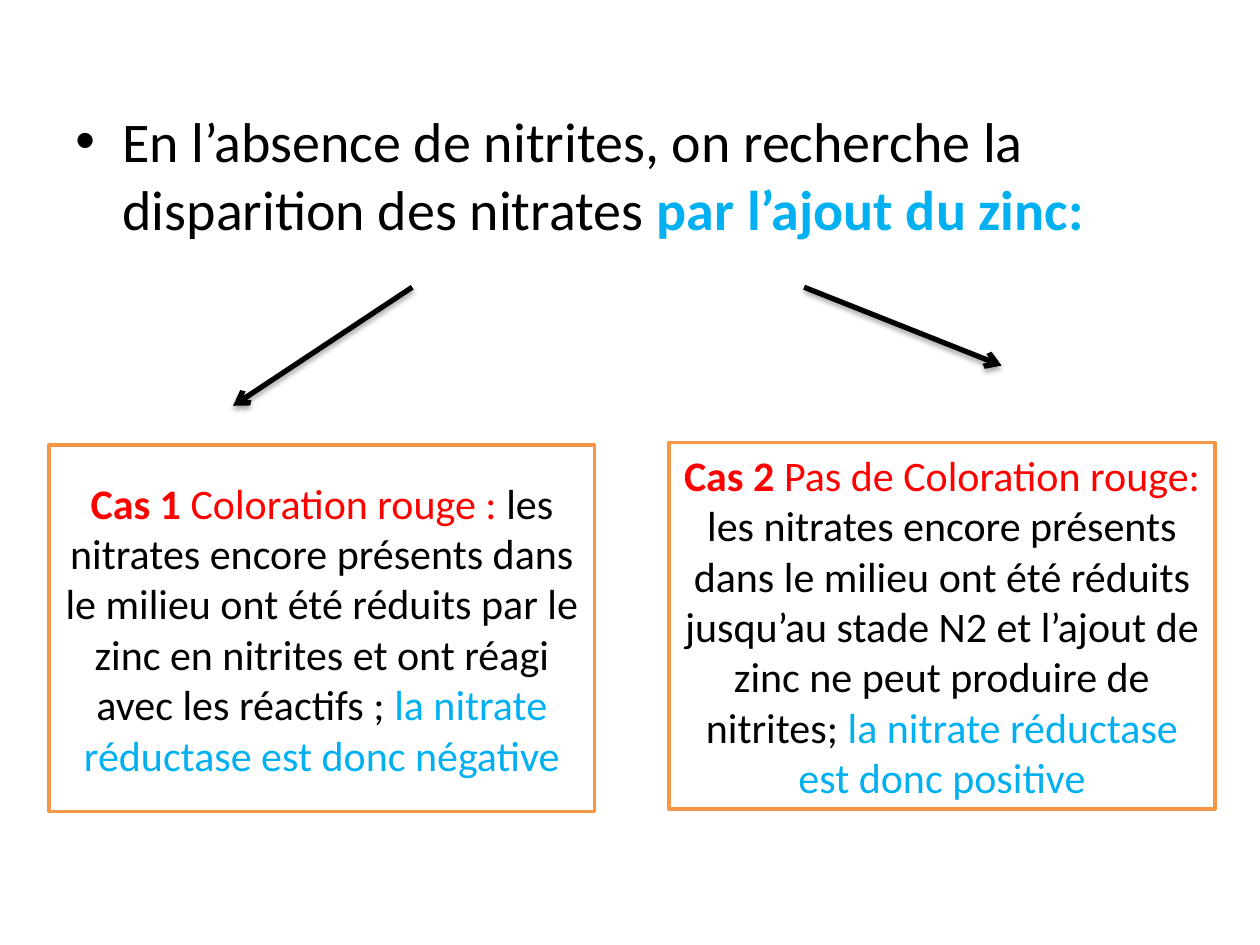
from dataclasses import dataclass

from lxml import etree
from pptx import Presentation
from pptx import util as u
from pptx.dml.color import RGBColor
from pptx.enum import shapes, text
from pptx.oxml import ns


@dataclass(frozen=True)
class Theme:
    font: str = "Calibri"
    title_size: int = 32
    case_size: int = 24
    ink: str = "000000"
    paper: str = "FFFFFF"
    red: str = "FF0000"
    blue: str = "00B0F0"
    orange: str = "F79646"


THEME = Theme()


def add_child(parent, tag, **attributes):
    child = etree.SubElement(parent, ns.qn(tag))
    for name, value in attributes.items():
        child.set(name, str(value))
    return child


def add_span(para, content, size, color=THEME.ink, bold=False):
    span = para.add_run()
    span.text = content
    font = span.font
    font.name, font.size, font.bold = THEME.font, u.Pt(size), bold
    font.color.rgb = RGBColor.from_string(color)


def add_statement(page, box, plain, stressed):
    """Bulleted sentence with a stressed ending."""
    frame = page.shapes.add_textbox(*map(u.Cm, box)).text_frame
    frame.word_wrap = True
    para = frame.paragraphs[0]
    para.space_before = u.Pt(0.2 * THEME.title_size)
    indent = u.Cm(0.95)
    properties = para._p.get_or_add_pPr()
    properties.set("marL", str(indent))
    properties.set("indent", str(-indent))
    add_child(properties, "a:buFont", typeface="Arial")
    add_child(properties, "a:buChar", char="•")
    add_span(para, plain, THEME.title_size)
    add_span(para, stressed, THEME.title_size, color=THEME.blue, bold=True)


def add_arrow(page, start, end):
    """Thick arrow with a soft shadow below it."""
    arrow = page.shapes.add_connector(
        shapes.MSO_CONNECTOR.STRAIGHT, *map(u.Cm, start + end))
    arrow.line.color.rgb = RGBColor.from_string(THEME.ink)
    arrow.line.width = u.Pt(3)
    add_child(arrow.line._get_or_add_ln(), "a:tailEnd", type="arrow")
    effects = add_child(arrow._element.spPr, "a:effectLst")
    shadow = add_child(effects, "a:outerShdw", blurRad=u.Pt(3.1),
                       dist=u.Pt(1.8), dir=90 * 60000, rotWithShape=0)
    color = add_child(shadow, "a:srgbClr", val=THEME.ink)
    add_child(color, "a:alpha", val=35000)


def add_case(page, box, label, sign, reason, conclusion):
    """Outlined box: case label, observed sign, reason and conclusion."""
    case = page.shapes.add_shape(
        shapes.MSO_SHAPE.RECTANGLE, *map(u.Cm, box))
    case.shadow.inherit = False
    case.fill.solid()
    case.fill.fore_color.rgb = RGBColor.from_string(THEME.paper)
    case.line.color.rgb = RGBColor.from_string(THEME.orange)
    case.line.width = u.Pt(2)
    frame = case.text_frame
    frame.word_wrap = True
    frame.vertical_anchor = text.MSO_ANCHOR.MIDDLE
    para = frame.paragraphs[0]
    para.alignment = text.PP_ALIGN.CENTER
    add_span(para, label, THEME.case_size, color=THEME.red, bold=True)
    add_span(para, sign, THEME.case_size, color=THEME.red)
    add_span(para, reason, THEME.case_size)
    add_span(para, conclusion, THEME.case_size, color=THEME.blue)


def main():
    deck = Presentation()
    deck.slide_width, deck.slide_height = u.Cm(25.4), u.Cm(19.05)
    page = deck.slides.add_slide(deck.slide_layouts[6])

    # Statement
    add_statement(
        page, (1.27, 2.03, 22.86, 12.57),
        "En l’absence de nitrites, on recherche la disparition des nitrates ",
        "par l’ajout du zinc:")

    # Arrows to the two cases
    arrow_top = 5.79
    add_arrow(page, (8.31, arrow_top), (4.7, 8.18))
    add_arrow(page, (16.21, arrow_top), (20.19, 7.37))

    # The two cases
    case_size = (11, 7.39)
    shared = "les nitrates encore présents dans le milieu ont été réduits "
    verdict = "la nitrate réductase est donc "
    add_case(
        page, (0.99, 8.97) + case_size, "Cas 1 ", "Coloration rouge : ",
        shared + "par le zinc en nitrites et ont réagi avec les réactifs ; ",
        verdict + "négative")
    add_case(
        page, (13.49, 8.92) + case_size, "Cas 2 ",
        "Pas de Coloration rouge: ",
        shared + "jusqu’au stade N2 et l’ajout de zinc ne peut produire "
        "de nitrites; ",
        verdict + "positive")

    deck.save("out.pptx")


if __name__ == "__main__":
    main()
